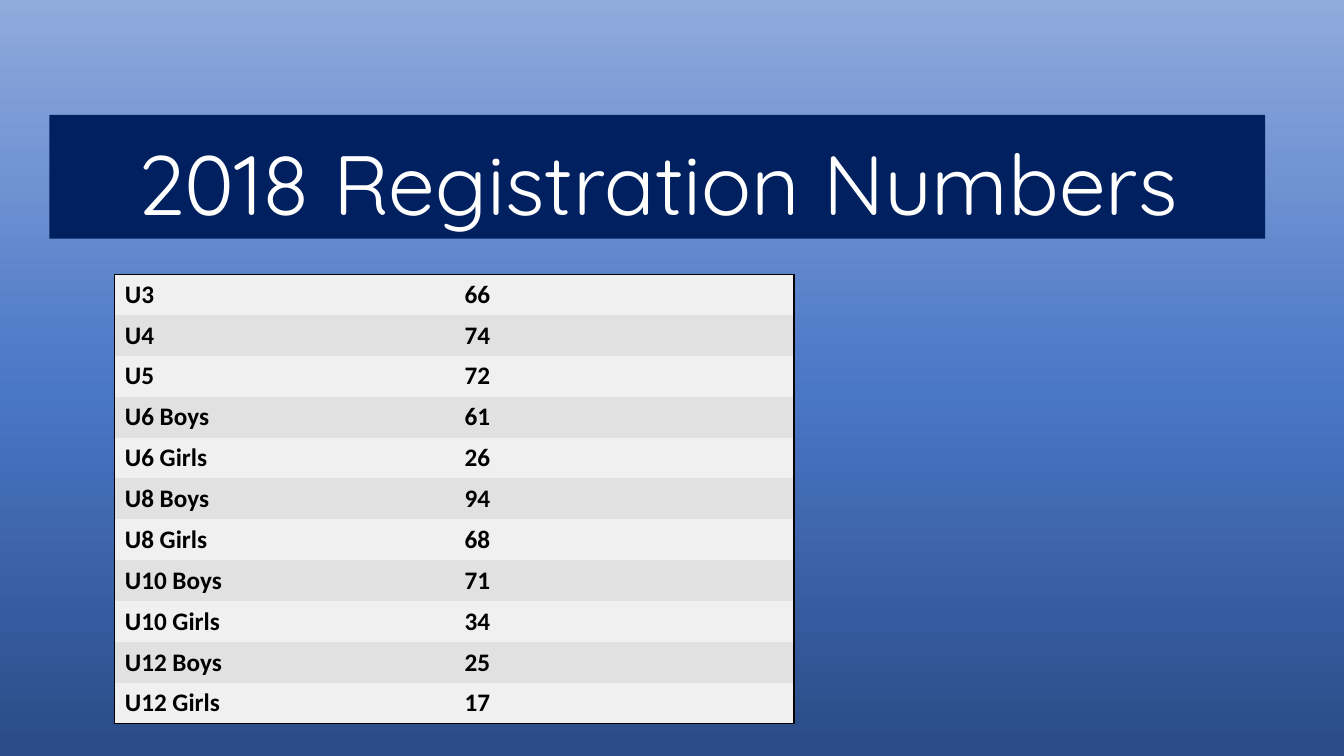
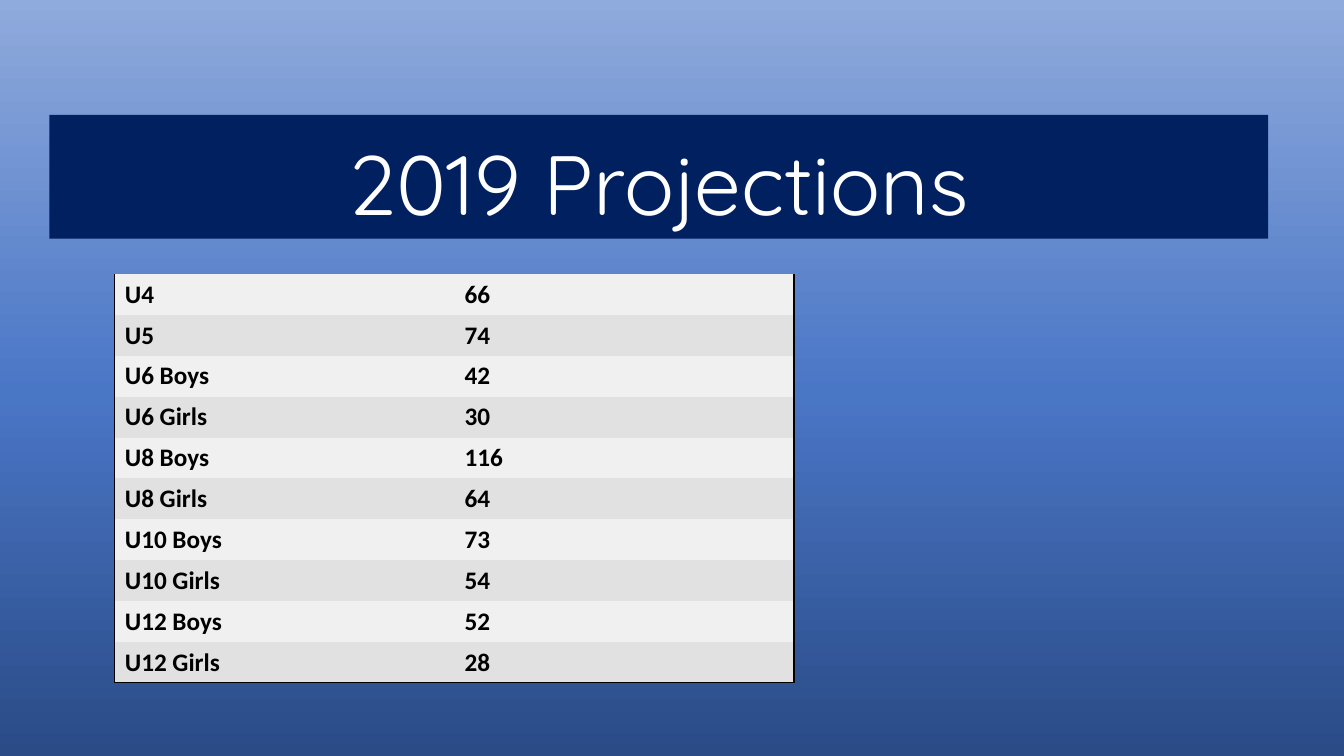
import copy
import pptx
import pptx.dml.color
import pptx.enum.shapes
import pptx.enum.text
import pptx.oxml.ns
import pptx.util
from lxml import etree

Pt = pptx.util.Pt
qn = pptx.oxml.ns.qn

COLORS = {
    "deep": "2A4B86",
    "mid": "4A76C6",
    "pale": "8FAADC",
    "band": "002060",
    "title": "FFFFFF",
    "text": "000000",
    "edge": "000000",
    "odd": "F0F0F0",
    "even": "E1E1E1",
}
STOPS = [(0, "deep"), (0.48, "mid"), (1, "pale")]
PLAIN = "{2D5ABB26-0587-4C30-8999-92F81FD0307C}"  # table style without grid

TEAMS = ["U3", "U4", "U5", "U6 Boys", "U6 Girls", "U8 Boys", "U8 Girls",
         "U10 Boys", "U10 Girls", "U12 Boys", "U12 Girls"]
COUNTS = [66, 74, 72, 61, 26, 94, 68, 71, 34, 25, 17]
PLANS = [66, 74, 42, 30, 116, 64, 73, 54, 52, 28]


def color(name):
    return pptx.dml.color.RGBColor.from_string(COLORS[name])


def style(para, font, size, name, bold=False):
    for run in para.runs:
        run.font.name = font
        run.font.size = Pt(size)
        run.font.bold = bold
        run.font.color.rgb = color(name)


def paint_master(master):
    """Give all slides the same three-stop gradient, dark at the bottom."""
    fill = master.background.fill
    fill.gradient()
    fill.gradient_angle = 90
    stops = next(master.element.cSld.iter(qn("a:gsLst")))
    stops.append(copy.deepcopy(stops[-1]))
    for stop, (place, name) in zip(fill.gradient_stops, STOPS):
        stop.position = place
        stop.color.rgb = color(name)


def add_title(slide, text, width):
    band = slide.shapes.add_shape(
        pptx.enum.shapes.MSO_SHAPE.RECTANGLE,
        Pt(35.3), Pt(82), Pt(width), Pt(88.4))
    band.shadow.inherit = False
    band.fill.solid()
    band.fill.fore_color.rgb = color("band")
    band.line.fill.background()
    frame = band.text_frame
    frame.word_wrap = True
    frame.vertical_anchor = pptx.enum.text.MSO_ANCHOR.BOTTOM
    frame.text = text
    para = frame.paragraphs[0]
    para.alignment = pptx.enum.text.PP_ALIGN.CENTER
    para.line_spacing = 0.9
    style(para, "Quicksand", 60, "title")


def add_edge(cell, side):
    props = cell._tc.get_or_add_tcPr()
    line = etree.SubElement(props, qn("a:ln" + side), w=str(Pt(1)))
    fill = etree.SubElement(line, qn("a:solidFill"))
    etree.SubElement(fill, qn("a:srgbClr"), val=COLORS["edge"])


def add_table(slide, rows, top_edge):
    """Add a striped table with a line around it, the top one by choice."""
    wide, high = 242.6, 29.19
    count = len(rows)
    table = slide.shapes.add_table(
        count, 2, Pt(82), Pt(195.8), Pt(2 * wide), Pt(count * high)).table
    table.first_row = table.horz_banding = False
    next(table._tbl.iter(qn("a:tableStyleId"))).text = PLAIN
    for row in table.rows:
        row.height = Pt(high)
    for r, pair in enumerate(rows):
        for c, value in enumerate(pair):
            cell = table.cell(r, c)
            add_edge(cell, "LR"[c])
            if r == 0 and top_edge:
                add_edge(cell, "T")
            if r == count - 1:
                add_edge(cell, "B")
            cell.fill.solid()
            cell.fill.fore_color.rgb = color("even" if r % 2 else "odd")
            cell.text_frame.text = str(value)
            style(cell.text_frame.paragraphs[0], "Calibri", 18, "text", True)


def main():
    deck = pptx.Presentation()
    deck.slide_width, deck.slide_height = Pt(960), Pt(540)
    paint_master(deck.slide_master)
    pages = [
        ("2018 Registration Numbers", 868.4, zip(TEAMS, COUNTS), True),
        ("2019 Projections", 870.6, zip(TEAMS[1:], PLANS), False),
    ]
    for title, width, rows, top_edge in pages:
        slide = deck.slides.add_slide(deck.slide_layouts[6])
        add_title(slide, title, width)
        add_table(slide, list(rows), top_edge)
    deck.save("out.pptx")


if __name__ == "__main__":
    main()
